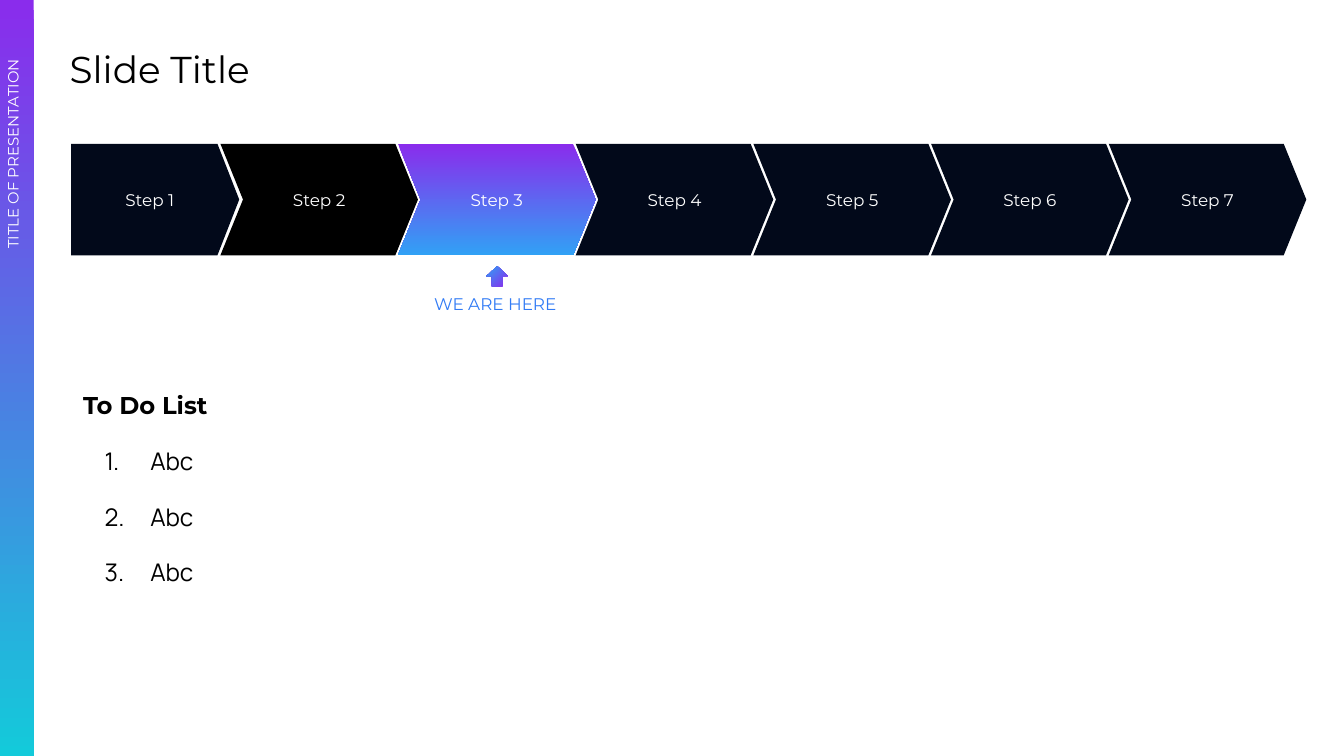
"""Build a process slide with seven steps, a position marker and a to-do list."""
from dataclasses import dataclass

from lxml.etree import SubElement
from pptx import Presentation
from pptx.dml.color import RGBColor
from pptx.enum.shapes import MSO_SHAPE as SHAPE
from pptx.enum.text import MSO_ANCHOR as ANCHOR, PP_ALIGN as ALIGN
from pptx.oxml.ns import qn
from pptx.util import Inches, Pt

WHITE, BLACK, NAVY = "FFFFFF", "000000", "02091A"
PURPLE, SKY, CYAN, BLUE = "8A2CEC", "31A1F5", "13CADA", "317BF5"
MAIN_FONT, LIST_FONT = "Montserrat", "Manrope"
SLIDE_WIDTH = 10
SLIDE_HEIGHT = SLIDE_WIDTH * 9 / 16
FIRST_CHEVRON, LAST_CHEVRON = 1.64, 8.25


@dataclass
class Box:
    left: float
    top: float
    width: float
    height: float

    def lengths(self):
        return [Inches(v) for v in (self.left, self.top, self.width, self.height)]


@dataclass
class Gradient:
    start: str
    end: str
    angle: float = 270


@dataclass
class Step:
    label: str
    fill: str | Gradient = NAVY


STEPS = [
    Step("Step 1"),
    Step("Step 2", BLACK),
    Step("Step 3", Gradient(PURPLE, SKY)),
    *[Step(f"Step {n}") for n in range(4, 8)],
]
STEP_PITCH = (LAST_CHEVRON - FIRST_CHEVRON) / (len(STEPS) - 2)
TODO = ["Abc"] * 3


def rgb(color: str) -> RGBColor:
    return RGBColor.from_string(color)


def style(p, size: float, color: str, font: str = MAIN_FONT,
          bold: bool = False, align=ALIGN.LEFT) -> None:
    p.alignment = align
    for r in p.runs:
        r.font.size = Pt(size)
        r.font.name = font
        r.font.bold = bold
        r.font.color.rgb = rgb(color)


def set_frame(tf, anchor=ANCHOR.TOP) -> None:
    tf.word_wrap = True
    tf.vertical_anchor = anchor
    tf.margin_left = tf.margin_right = Inches(0.1)
    tf.margin_top = tf.margin_bottom = Inches(0.1)


def add_shape(s, kind, box: Box, fill: str | Gradient, adjustments=()):
    sp = s.shapes.add_shape(kind, *box.lengths())
    sp.shadow.inherit = False
    sp.line.fill.background()
    for i, value in enumerate(adjustments):
        sp.adjustments[i] = value
    if isinstance(fill, Gradient):
        sp.fill.gradient()
        sp.fill.gradient_angle = fill.angle
        for stop, color in zip(sp.fill.gradient_stops, (fill.start, fill.end)):
            stop.color.rgb = rgb(color)
    else:
        sp.fill.solid()
        sp.fill.fore_color.rgb = rgb(fill)
    return sp


def add_text(s, box: Box, text: str, size: float, color: str, **kwargs):
    sp = s.shapes.add_textbox(*box.lengths())
    set_frame(sp.text_frame)
    p = sp.text_frame.paragraphs[0]
    p.text = text
    style(p, size, color, **kwargs)
    return sp


def add_step(s, index: int, step: Step) -> None:
    if index == 0:
        sp = add_shape(s, SHAPE.PENTAGON, Box(0.53, 1.07, 1.25, 0.83), step.fill, [0.195])
    else:
        box = Box(FIRST_CHEVRON + (index - 1) * STEP_PITCH, 1.07, 1.47, 0.83)
        sp = add_shape(s, SHAPE.CHEVRON, box, step.fill, [0.203])
    set_frame(sp.text_frame, ANCHOR.MIDDLE)
    p = sp.text_frame.paragraphs[0]
    p.text = step.label
    style(p, 9, WHITE, align=ALIGN.CENTER)


def number(p) -> None:
    pPr = p._p.get_or_add_pPr()
    pPr.set("marL", str(Inches(0.5)))
    pPr.set("indent", str(Inches(-0.34)))
    SubElement(SubElement(pPr, qn("a:buClr")), qn("a:srgbClr"), val=BLACK)
    SubElement(pPr, qn("a:buAutoNum"), type="arabicPeriod")


def add_todo(s, heading: str, items: list[str]) -> None:
    tf = add_text(s, Box(0.52, 2.77, 9.09, 2.48), heading, 13, BLACK, bold=True).text_frame
    tf.paragraphs[0].line_spacing = 1.15
    for item in items:
        p = tf.add_paragraph()
        p.text = item
        style(p, 13, BLACK, LIST_FONT)
        p.line_spacing = 1.15
        p.space_before = Pt(12)
        number(p)
    tf.paragraphs[-1].space_after = Pt(12)


def main() -> None:
    prs = Presentation()
    prs.slide_width, prs.slide_height = Inches(SLIDE_WIDTH), Inches(SLIDE_HEIGHT)
    s = prs.slides.add_slide(prs.slide_layouts[6])
    add_text(s, Box(0.42, 0.24, 9.32, 0.56), "Slide Title", 20, BLACK)
    for i, step in enumerate(STEPS):
        add_step(s, i, step)
    add_text(s, Box(2.95, 2.11, 1.47, 0.35), "WE ARE HERE", 9, BLUE, align=ALIGN.CENTER)
    add_todo(s, "To Do List", TODO)
    add_shape(s, SHAPE.UP_ARROW, Box(3.62, 1.98, 0.16, 0.15),
              Gradient(PURPLE, SKY, 135), [0.5, 0.5])
    add_shape(s, SHAPE.RECTANGLE, Box(0, 0, 0.25, SLIDE_HEIGHT), Gradient(PURPLE, CYAN))
    side = add_text(s, Box(-2.26, 2.56, 4.78, 0.34), "TITLE OF PRESENTATION", 8, WHITE,
                    align=ALIGN.RIGHT)
    side.rotation = 270
    prs.save("out.pptx")


if __name__ == "__main__":
    main()
